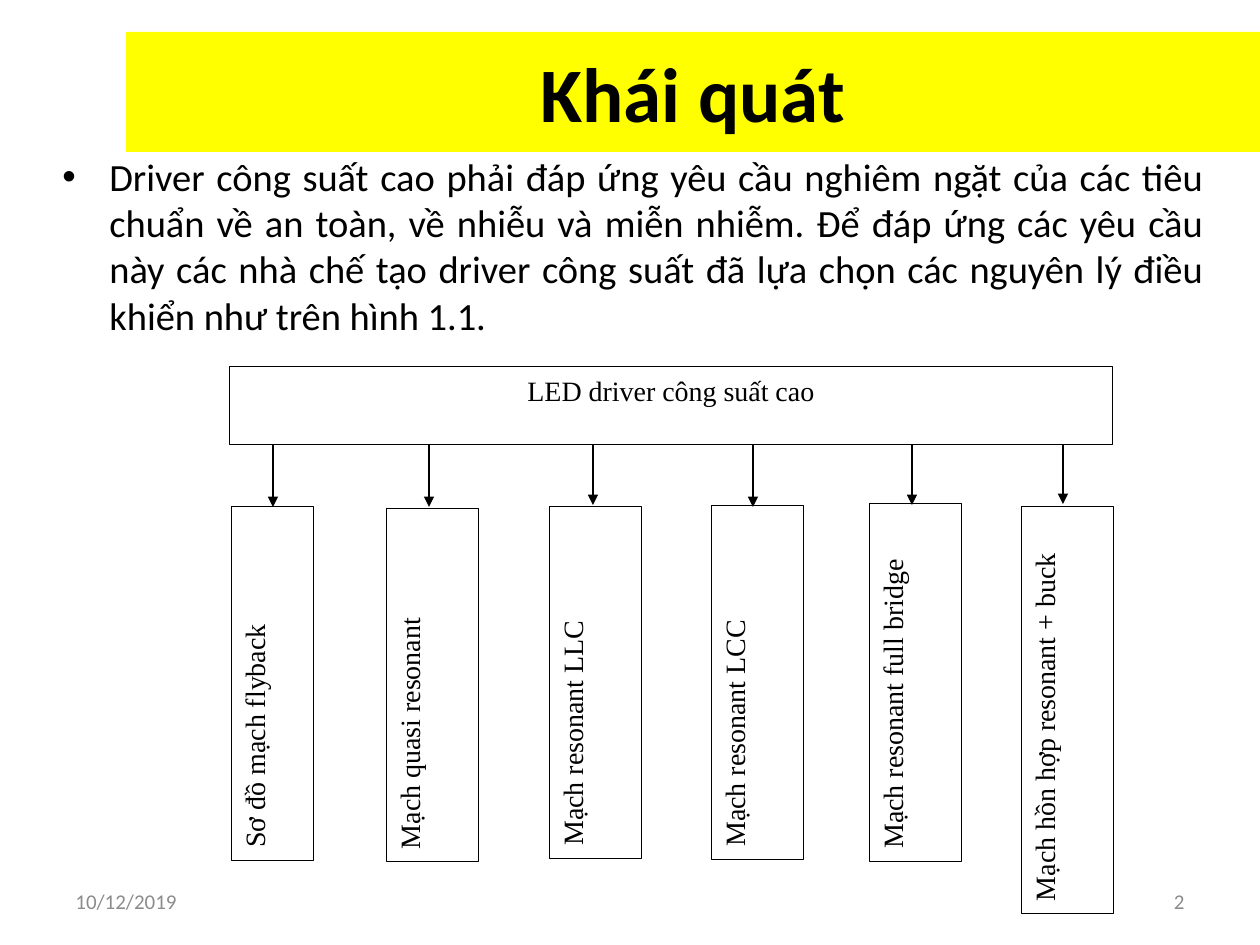
from dataclasses import dataclass

from lxml.etree import SubElement
from pptx import Presentation
from pptx.dml.color import RGBColor
from pptx.enum.shapes import MSO_CONNECTOR, MSO_SHAPE
from pptx.enum.text import MSO_ANCHOR, PP_ALIGN
from pptx.oxml.ns import qn
from pptx.util import Emu, Pt

PX = 914400 / 126


def px(n):
    return Emu(round(n * PX))


@dataclass(frozen=True)
class Theme:
    black: RGBColor = RGBColor(0, 0, 0)
    white: RGBColor = RGBColor(255, 255, 255)
    yellow: RGBColor = RGBColor(255, 255, 0)
    gray: RGBColor = RGBColor(0x8C, 0x8C, 0x8C)
    sans: str = "Calibri"
    serif: str = "Times New Roman"
    title: float = 44
    body: float = 22
    label: float = 16
    footer: float = 12
    border: float = 0.5
    arrow: float = 0.75


class SlideBuilder:
    """Adds styled elements to the current slide."""

    def __init__(self, slide, theme):
        self.s = slide
        self.t = theme
        self.group = slide.shapes.add_group_shape()

    def set_text(self, sp, text, font, size, color, align, anchor, bold=False):
        tf = sp.text_frame
        tf.word_wrap = True
        tf.vertical_anchor = anchor
        tf.text = text
        p = tf.paragraphs[0]
        p.alignment = align
        r = p.runs[0]
        r.font.name = font
        r.font.size = Pt(size)
        r.font.bold = bold
        r.font.color.rgb = color
        return p

    def title(self, text, x, y, w, h):
        sp = self.s.shapes.title
        sp.left, sp.top, sp.width, sp.height = map(px, (x, y, w, h))
        sp.fill.solid()
        sp.fill.fore_color.rgb = self.t.yellow
        self.set_text(sp, text, self.t.sans, self.t.title, self.t.black,
                      PP_ALIGN.CENTER, MSO_ANCHOR.MIDDLE, True)

    def bullet(self, text, x, y, w, h, indent):
        sp = self.s.shapes.add_textbox(*map(px, (x, y, w, h)))
        p = self.set_text(sp, text, self.t.sans, self.t.body, self.t.black,
                          PP_ALIGN.JUSTIFY, MSO_ANCHOR.TOP)
        p.space_before = Pt(self.t.body * 0.2)
        pPr = p._p.get_or_add_pPr()
        pPr.set("marL", str(px(indent)))
        pPr.set("indent", str(-px(indent)))
        SubElement(pPr, qn("a:buFont")).set("typeface", "Arial")
        SubElement(pPr, qn("a:buChar")).set("char", "•")

    def footer(self, text, x, y, w, h, align):
        sp = self.s.shapes.add_textbox(*map(px, (x, y, w, h)))
        self.set_text(sp, text, self.t.sans, self.t.footer, self.t.gray,
                      align, MSO_ANCHOR.MIDDLE)

    def box(self, text, cx, cy, w, h, align=PP_ALIGN.LEFT, rotation=0):
        sp = self.group.shapes.add_shape(
            MSO_SHAPE.RECTANGLE, *map(px, (cx - w / 2, cy - h / 2, w, h)))
        sp.rotation = rotation
        sp.shadow.inherit = False
        sp.fill.solid()
        sp.fill.fore_color.rgb = self.t.white
        sp.line.color.rgb = self.t.black
        sp.line.width = Pt(self.t.border)
        p = self.set_text(sp, text, self.t.serif, self.t.label, self.t.black,
                          align, MSO_ANCHOR.TOP)
        p.space_before = Pt(6)

    def arrow(self, x, y1, y2):
        c = self.group.shapes.add_connector(
            MSO_CONNECTOR.STRAIGHT, *map(px, (x, y1, x, y2)))
        c.line.color.rgb = self.t.black
        c.line.width = Pt(self.t.arrow)
        spPr = c._element.spPr
        SubElement(spPr.find(qn("a:ln")), qn("a:tailEnd")).set("type", "triangle")
        SubElement(spPr, qn("a:effectLst"))


BODY = ("Driver công suất cao phải đáp ứng yêu cầu nghiêm ngặt của các tiêu "
        "chuẩn về an toàn, về nhiễu và miễn nhiễm. Để đáp ứng các yêu cầu "
        "này các nhà chế tạo driver công suất đã lựa chọn các nguyên lý điều "
        "khiển như trên hình 1.1.")

CIRCUITS = [
    ("Sơ đồ mạch flyback", 272, 683, 354, 82, 273, 507),
    ("Mạch quasi resonant", 432, 685, 353, 92, 429, 507),
    ("Mạch resonant LLC", 595, 682, 352, 92, 593, 505),
    ("Mạch resonant LCC", 757, 682, 354, 92, 753, 507),
    ("Mạch resonant full bridge", 915, 682, 358, 92, 912, 505),
    ("Mạch hồn hợp resonant + buck", 1067, 710, 407, 92, 1063, 504),
]


def main():
    prs = Presentation()
    prs.slide_width, prs.slide_height = px(1260), px(945)
    s = SlideBuilder(prs.slides.add_slide(prs.slide_layouts[5]), Theme())
    s.title("Khái quát", 126, 32, 1134, 120)
    s.bullet(BODY, 50, 147, 1166, 189, 47)
    s.footer("10/12/2019", 63, 876, 294, 50, PP_ALIGN.LEFT)
    s.footer("2", 903, 876, 294, 50, PP_ALIGN.RIGHT)
    s.box("LED driver công suất cao", 671, 406, 883, 78, PP_ALIGN.CENTER)
    for text, cx, cy, length, depth, arrow_x, arrow_end in CIRCUITS:
        s.box(text, cx, cy, length, depth, rotation=270)
        s.arrow(arrow_x, 445, arrow_end)
    prs.save("out.pptx")


if __name__ == "__main__":
    main()
